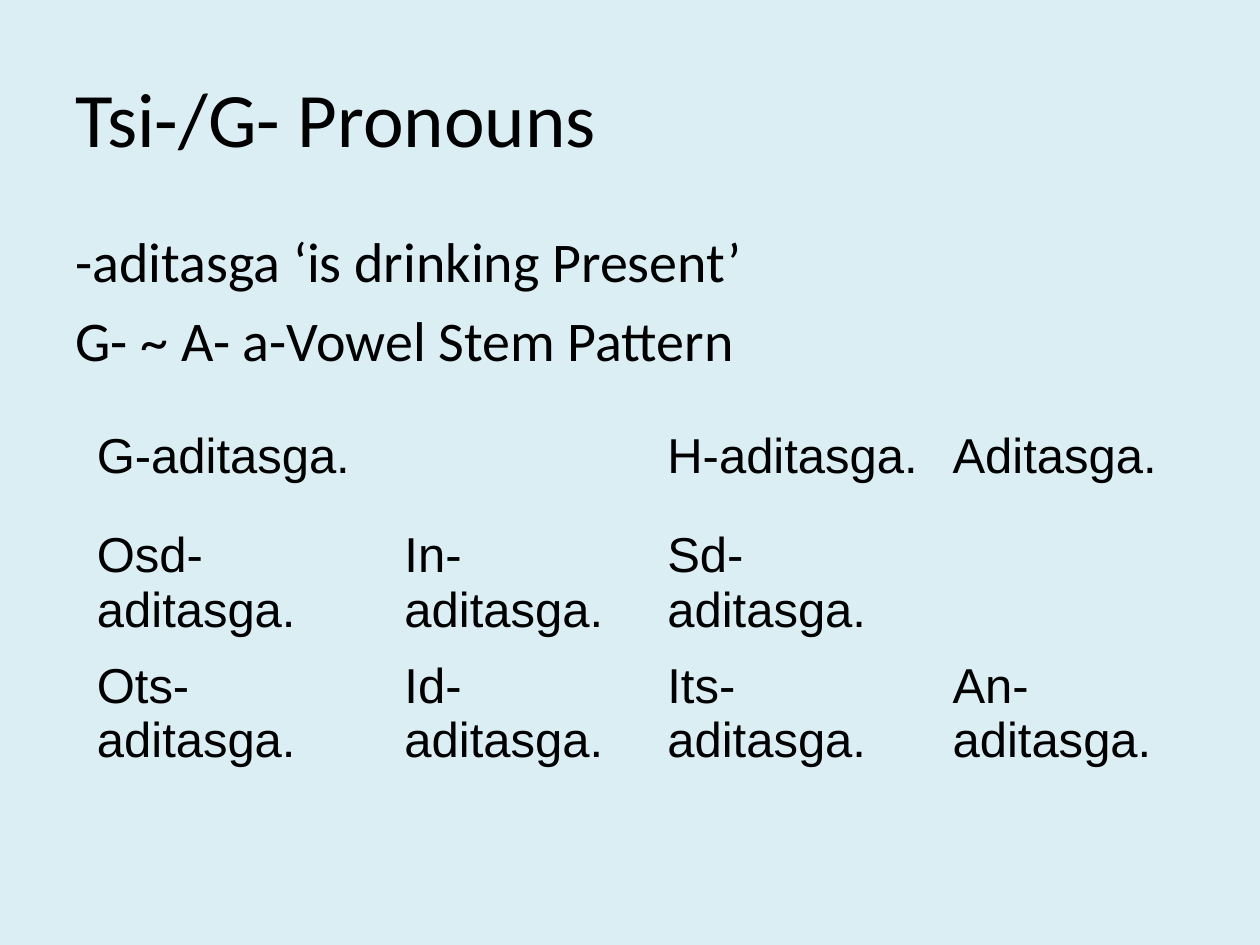
from pptx import Presentation
from pptx.dml.color import RGBColor
from pptx.enum.text import MSO_ANCHOR
from pptx.util import Cm, Pt

COLORS = {"background": "DBEEF4", "text": "000000"}
NO_STYLE_NO_GRID = "{2D5ABB26-0587-4C30-8999-92F81FD0307C}"


def set_font(paragraph, name, size):
    paragraph.font.name = name
    paragraph.font.size = Pt(size)
    paragraph.font.color.rgb = RGBColor.from_string(COLORS["text"])


def add_text(slide, top, height, lines, size, anchor, space_before=0):
    """Add a full-width text box with one paragraph per line."""
    shape = slide.shapes.add_textbox(Cm(1.27), Cm(top), Cm(22.86), Cm(height))
    frame = shape.text_frame
    frame.word_wrap = True
    frame.vertical_anchor = anchor
    frame.text = "\n".join(lines)
    for paragraph in frame.paragraphs:
        paragraph.space_before = Pt(space_before)
        set_font(paragraph, "Calibri", size)


presentation = Presentation()
presentation.slide_width = Cm(25.4)
presentation.slide_height = Cm(19.05)
slide = presentation.slides.add_slide(presentation.slide_layouts[6])
slide.background.fill.solid()
slide.background.fill.fore_color.rgb = RGBColor.from_string(COLORS["background"])

add_text(slide, 0.76, 3.18, ["Tsi-/G- Pronouns"], 44, MSO_ANCHOR.MIDDLE)
add_text(
    slide, 4.45, 12.57,
    ["-aditasga ‘is drinking Present’", "G- ~ A- a-Vowel Stem Pattern"],
    32, MSO_ANCHOR.TOP, space_before=6.4,
)

# Verb forms: one row per number, one column per person
verb_forms = [
    ["G-aditasga.", "", "H-aditasga.", "Aditasga."],
    ["Osd-aditasga.", "In-aditasga.", "Sd-aditasga.", ""],
    ["Ots-aditasga.", "Id-aditasga.", "Its-aditasga.", "An-aditasga."],
]
column_widths = [6.2, 5.3, 5.75, 5.75]
row_height = 2

table_shape = slide.shapes.add_table(
    len(verb_forms), len(column_widths), Cm(1.7), Cm(8.53),
    Cm(sum(column_widths)), Cm(row_height * len(verb_forms)),
)
table = table_shape.table
table.first_row = False
table.horz_banding = False
table._tbl.tblPr[0].text = NO_STYLE_NO_GRID

for column, width in zip(table.columns, column_widths):
    column.width = Cm(width)
for row, forms in zip(table.rows, verb_forms):
    row.height = Cm(row_height)
    for cell, form in zip(row.cells, forms):
        cell.fill.background()
        cell.text = form
        set_font(cell.text_frame.paragraphs[0], "Arial", 28)

presentation.save("out.pptx")
